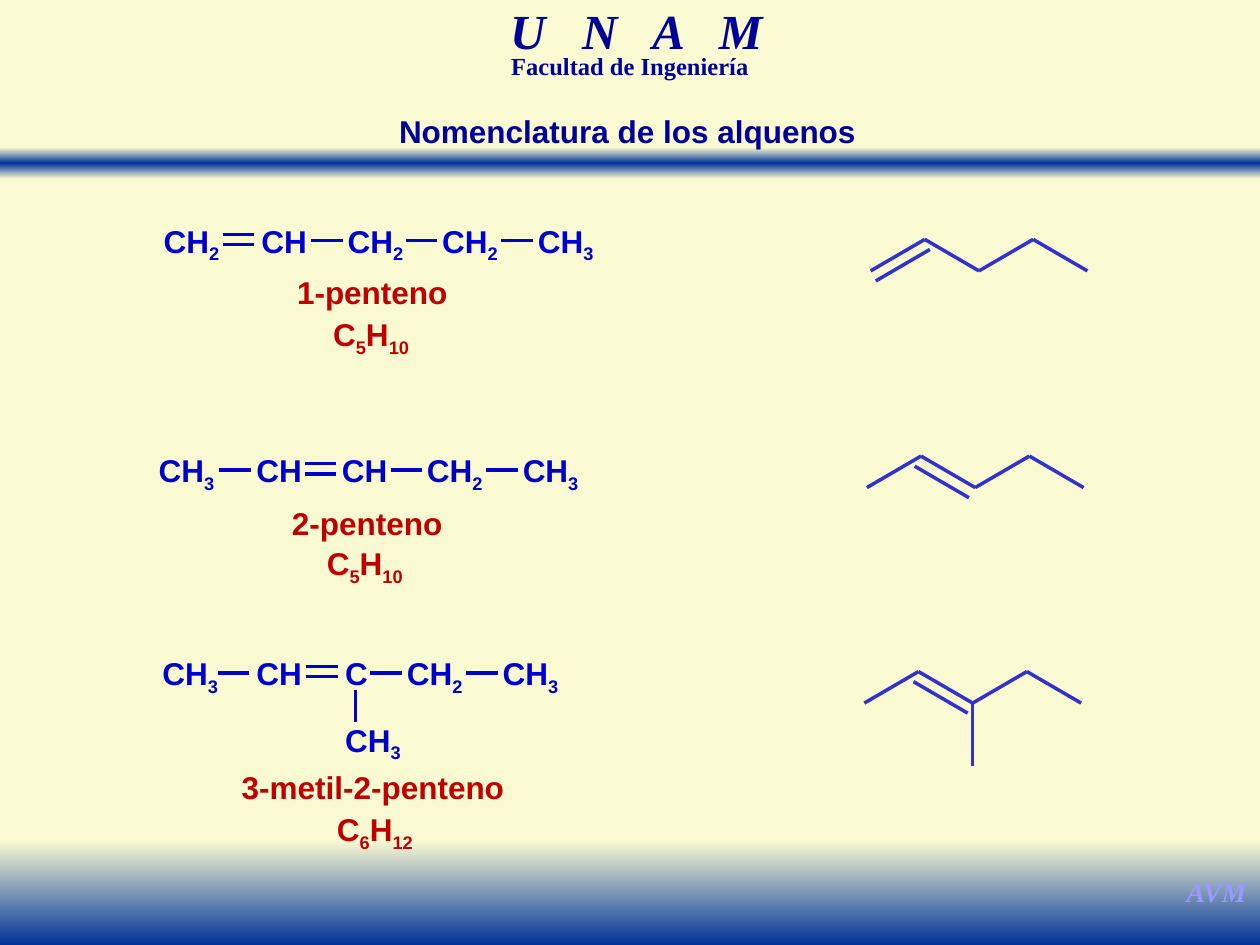
from copy import deepcopy
from itertools import groupby, pairwise

from lxml import etree
from pptx import Presentation
from pptx.dml.color import RGBColor
from pptx.enum import shapes, text
from pptx.oxml import ns
from pptx.util import Inches, Pt

CREAM = RGBColor(0xFA, 0xFA, 0xD2)
DEEP_BLUE = RGBColor(0x00, 0x33, 0x99)
NAVY = RGBColor(0x00, 0x00, 0x99)
LILAC = RGBColor(0x99, 0x99, 0xFF)
RED = RGBColor(0xC0, 0x00, 0x00)
FORMULA_BLUE = RGBColor(0x00, 0x00, 0xCC)
SKELETON_BLUE = RGBColor(0x33, 0x33, 0xCC)
SANS, SERIF = "Arial", "Times New Roman"

TITLE = "Nomenclatura de los alquenos"
BANDS = [
    (1.17, 0.25, [CREAM, DEEP_BLUE, CREAM]),
    (6.67, 0.83, [CREAM, DEEP_BLUE]),
]
MOLECULES = [
    {
        "name": ("1-penteno", 2.955, 2.12), "formula": ("C5H10", 2.945, 2.45),
        "top": 1.71,
        "atoms": [("CH2", 1.19), ("CH", 1.97), ("CH2", 2.65), ("CH2", 3.4), ("CH3", 4.16)],
        "bonds": [(1.77, 2), (2.47, 1), (3.22, 1), (3.98, 1)],
        "skeleton": (6.91, 2.15), "double_bond": 0, "inner_shift": 0.04,
    },
    {
        "name": ("2-penteno", 2.915, 3.95), "formula": ("C5H10", 2.895, 4.27),
        "top": 3.53,
        "atoms": [("CH3", 1.15), ("CH", 1.93), ("CH", 2.61), ("CH2", 3.28), ("CH3", 4.04)],
        "bonds": [(1.74, 1), (2.42, 2), (3.1, 1), (3.86, 1)],
        "skeleton": (6.88, 3.87), "double_bond": 1, "inner_shift": -0.05,
    },
    {
        "name": ("3-metil-2-penteno", 2.96, 6.05), "formula": ("C6H12", 2.975, 6.38),
        "top": 5.14,
        "atoms": [("CH3", 1.18), ("CH", 1.93), ("C", 2.64), ("CH2", 3.12), ("CH3", 3.88)],
        "bonds": [(1.73, 1), (2.43, 2), (2.94, 1), (3.7, 1)],
        "branch": ("CH3", 2.63, 2.82),
        "skeleton": (6.86, 5.58), "double_bond": 1, "inner_shift": -0.04,
    },
]
ATOM_WIDTHS = {"C": 0.38, "CH": 0.57, "CH2": 0.66, "CH3": 0.66}
TEXT_HEIGHT = 0.4
BOND_LENGTH = 0.25
BOND_OFFSETS = {1: [0.2], 2: [0.15, 0.23]}
STEP, RISE = 0.43, 0.25


def style(paragraph, color, size=18, font=SANS, italic=False):
    paragraph.alignment = text.PP_ALIGN.CENTER
    paragraph.font.name = font
    paragraph.font.size = Pt(size)
    paragraph.font.bold = True
    paragraph.font.italic = italic
    paragraph.font.color.rgb = color


def add_text(container, content, left, top, width, height, color, wrap=False, **options):
    box = container.add_textbox(Inches(left), Inches(top), Inches(width), Inches(height))
    box.text_frame.word_wrap = wrap
    paragraph = box.text_frame.paragraphs[0]
    paragraph.text = content
    style(paragraph, color, **options)
    return paragraph


def add_formula(container, formula, left, top, width, color):
    paragraph = add_text(container, "", left, top, width, TEXT_HEIGHT, color)
    for is_subscript, letters in groupby(formula, str.isdigit):
        run = paragraph.add_run()
        run.text = "".join(letters)
        if is_subscript:
            run.font._element.set("baseline", "-25000")


def add_bond(container, start, end, color):
    bond = container.add_connector(
        shapes.MSO_CONNECTOR.STRAIGHT, *(Inches(value) for value in (*start, *end)))
    bond.line.color.rgb = color
    bond.line.width = Pt(2)
    etree.SubElement(bond._element.spPr, ns.qn("a:effectLst"))


def add_band(container, top, height, colors):
    band = container.add_shape(
        shapes.MSO_SHAPE.RECTANGLE, 0, Inches(top), Inches(10), Inches(height))
    band.shadow.inherit = False
    band.line.fill.background()
    band.fill.gradient()
    band.fill.gradient_angle = 270
    stop_list = band._element.spPr.find(".//" + ns.qn("a:gsLst"))
    while len(stop_list) < len(colors):
        stop_list.append(deepcopy(stop_list[-1]))
    for index, (stop, color) in enumerate(zip(band.fill.gradient_stops, colors)):
        stop.position = index / (len(colors) - 1)
        stop.color.rgb = color


def add_condensed(container, molecule):
    top = molecule["top"]
    for atom, left in molecule["atoms"]:
        add_formula(container, atom, left, top, ATOM_WIDTHS[atom], FORMULA_BLUE)
    for left, order in molecule["bonds"]:
        for offset in BOND_OFFSETS[order]:
            y = top + offset
            add_bond(container, (left, y), (left + BOND_LENGTH, y), FORMULA_BLUE)
    if "branch" in molecule:
        atom, left, x = molecule["branch"]
        add_formula(container, atom, left, top + 0.53, ATOM_WIDTHS[atom], FORMULA_BLUE)
        add_bond(container, (x, top + 0.34), (x, top + 0.34 + BOND_LENGTH), FORMULA_BLUE)


def add_skeleton(container, molecule):
    left, bottom = molecule["skeleton"]
    points = [(left + index * STEP, bottom - index % 2 * RISE) for index in range(5)]
    segments = list(pairwise(points))
    shift = molecule["inner_shift"]
    inner = [(x + shift, y + 0.08) for x, y in segments[molecule["double_bond"]]]
    segments.append(inner)
    if "branch" in molecule:
        x, y = points[2]
        segments.append(((x, y), (x, y + 0.5)))
    for start, end in segments:
        add_bond(container, start, end, SKELETON_BLUE)


def main():
    presentation = Presentation()
    presentation.slide_width, presentation.slide_height = Inches(10), Inches(7.5)
    slide = presentation.slides.add_slide(presentation.slide_layouts[5])
    slide.background.fill.solid()
    slide.background.fill.fore_color.rgb = CREAM

    for top, height, colors in BANDS:
        add_band(slide.shapes, top, height, colors)

    school = add_text(slide.shapes, "U N A M", 3.09, 0.08, 3.92, 0.43, NAVY,
                      wrap=True, size=28, font=SERIF, italic=True)
    school.runs[0].font._element.set("spc", "700")
    faculty = add_text(slide.shapes, "Facultad de Ingeniería", 3.21, 0.42, 3.58, 0.26, NAVY,
                       wrap=True, size=14, font=SERIF)
    school.line_spacing = faculty.line_spacing = 0.7
    add_text(slide.shapes, "AVM", 9.31, 6.89, 0.69, 0.37, LILAC,
             size=16, font=SERIF, italic=True)

    for molecule in MOLECULES:
        name, center, top = molecule["name"]
        add_text(slide.shapes, name, center - 1.27, top, 2.54, TEXT_HEIGHT, RED)
        formula, center, top = molecule["formula"]
        add_formula(slide.shapes, formula, center - 0.425, top, 0.85, RED)
        add_condensed(slide.shapes.add_group_shape().shapes, molecule)
        add_skeleton(slide.shapes.add_group_shape().shapes, molecule)

    title = slide.shapes.title
    title.left, title.top = Inches(3.05), Inches(0.84)
    title.width, title.height = Inches(3.86), Inches(TEXT_HEIGHT)
    title.text_frame.text = TITLE
    title.text_frame.word_wrap = False
    title.text_frame.auto_size = text.MSO_AUTO_SIZE.NONE
    title.text_frame.vertical_anchor = text.MSO_ANCHOR.TOP
    style(title.text_frame.paragraphs[0], NAVY)
    slide.shapes._spTree.append(title._element)

    presentation.save("out.pptx")


if __name__ == "__main__":
    main()
